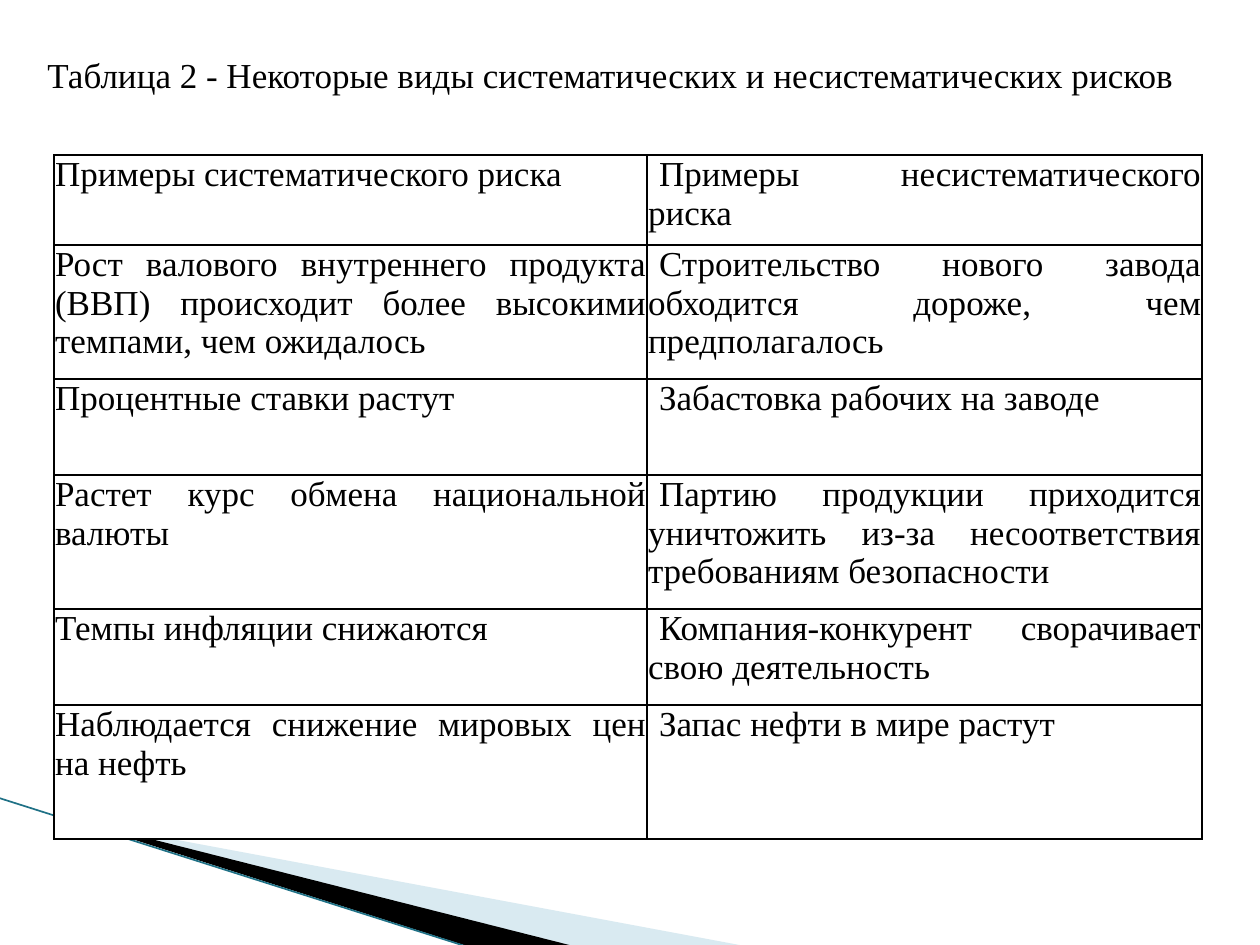
from lxml import etree
from pptx import Presentation
from pptx import util as u
from pptx.dml import color as dml
from pptx.enum import shapes, text
from pptx.oxml import ns

SCALE = 914400 / 126
FONT = "Times New Roman"
TITLE = "Таблица 2 - Некоторые виды систематических и несистематических рисков"
COLUMN_WIDTHS = [593, 555]
ROW_HEIGHTS = [90, 134, 96, 134, 96, 134]
RISKS = [
    ("Примеры систематического риска", "Примеры несистематического риска"),
    ("Рост валового внутреннего продукта (ВВП) происходит более высокими темпами, чем ожидалось",
     "Строительство нового завода обходится дороже, чем предполагалось"),
    ("Процентные ставки растут", "Забастовка рабочих на заводе"),
    ("Растет курс обмена национальной валюты",
     "Партию продукции приходится уничтожить из-за несоответствия требованиям безопасности"),
    ("Темпы инфляции снижаются", "Компания-конкурент сворачивает свою деятельность"),
    ("Наблюдается снижение мировых цен на нефть", "Запас нефти в мире растут"),
]


def px(length):
    """Turn pixels into EMU."""
    return u.Emu(round(length * SCALE))


def paint(target, hex_color):
    """Give a fill or a line fill a solid colour."""
    target.solid()
    target.fore_color.rgb = dml.RGBColor.from_string(hex_color)


def write(frame, words, size=20, color="000000", spacing=None, indent=0):
    """Write one justified paragraph into a text frame."""
    frame.word_wrap = True
    paragraph = frame.paragraphs[0]
    paragraph.alignment = text.PP_ALIGN.JUSTIFY
    if spacing:
        paragraph.line_spacing = spacing
    if indent:
        properties = paragraph._p.get_or_add_pPr()
        properties.set("marL", "0")
        properties.set("indent", str(px(indent)))
    run = paragraph.add_run()
    run.text = words
    run.font.name = FONT
    run.font.size = u.Pt(size)
    run.font.color.rgb = dml.RGBColor.from_string(color)


def add_wedge(slide, left, top, points, color, opacity=100):
    """Draw a filled outline from points relative to its corner."""
    start, *others = [(px(left + x), px(top + y)) for x, y in points]
    builder = slide.shapes.build_freeform(*start)
    builder.add_line_segments(others, close=True)
    wedge = builder.convert_to_shape()
    wedge.shadow.inherit = False
    wedge.line.fill.background()
    paint(wedge.fill, color)
    if opacity < 100:
        tone = wedge._element.spPr.find(".//" + ns.qn("a:srgbClr"))
        etree.SubElement(tone, ns.qn("a:alpha"), val=str(opacity * 1000))


def add_corner(slide, left, top, width, height):
    """Draw the swoosh in the lower left corner."""
    add_wedge(slide, left + 70, top + 21,
              [(0, 1), (width - 70, height - 21), (506, height - 21), (0, 0)], "A0CBDC", 40)
    add_wedge(slide, left + 68, top + 20,
              [(0, 0), (509, height - 20), (402, height - 20), (1, 1)], "000000")
    edge = slide.shapes.add_connector(shapes.MSO_CONNECTOR.STRAIGHT, px(left - 1), px(top),
                                      px(left + 468), px(top + height))
    edge.line.width = u.Pt(0.95)
    paint(edge.line.fill, "1F7186")
    etree.SubElement(edge._element.spPr, ns.qn("a:effectLst"))


def add_borders(cell, color="000000", width=1):
    """Draw a thin line on each side of a cell."""
    properties = cell._tc.get_or_add_tcPr()
    for side in ("lnL", "lnR", "lnT", "lnB"):
        line = etree.SubElement(properties, ns.qn(f"a:{side}"), w=str(u.Pt(width)))
        fill = etree.SubElement(line, ns.qn("a:solidFill"))
        etree.SubElement(fill, ns.qn("a:srgbClr"), val=color)


def add_risk_table(slide, left, top):
    """Place the two-column table of risks."""
    table = slide.shapes.add_table(len(RISKS), len(COLUMN_WIDTHS), px(left), px(top),
                                   px(sum(COLUMN_WIDTHS)), px(sum(ROW_HEIGHTS))).table
    table.first_row = table.horz_banding = False
    for column, width in zip(table.columns, COLUMN_WIDTHS):
        column.width = px(width)
    for row, height, examples in zip(table.rows, ROW_HEIGHTS, RISKS):
        row.height = px(height)
        for cell, example, indent in zip(row.cells, examples, (0, 11)):
            cell.margin_left = cell.margin_right = px(1)
            cell.margin_top = cell.margin_bottom = 0
            add_borders(cell)
            paint(cell.fill, "FFFFFF")
            write(cell.text_frame, example, indent=indent)


def add_title(slide, left, top, width, height):
    """Place the caption above the table."""
    caption = slide.shapes.add_textbox(px(left), px(top), px(width), px(height))
    caption.text_frame.auto_size = text.MSO_AUTO_SIZE.SHAPE_TO_FIT_TEXT
    write(caption.text_frame, TITLE, spacing=1.5)


def main():
    """Build the slide and save it."""
    deck = Presentation()
    deck.slide_width, deck.slide_height = px(1260), px(945)
    slide = deck.slides.add_slide(deck.slide_layouts[6])
    add_corner(slide, 0, 798, 750, 149)
    add_risk_table(slide, 54, 155)
    add_title(slide, 35, 26, 1152, 77)
    deck.save("out.pptx")


if __name__ == "__main__":
    main()
